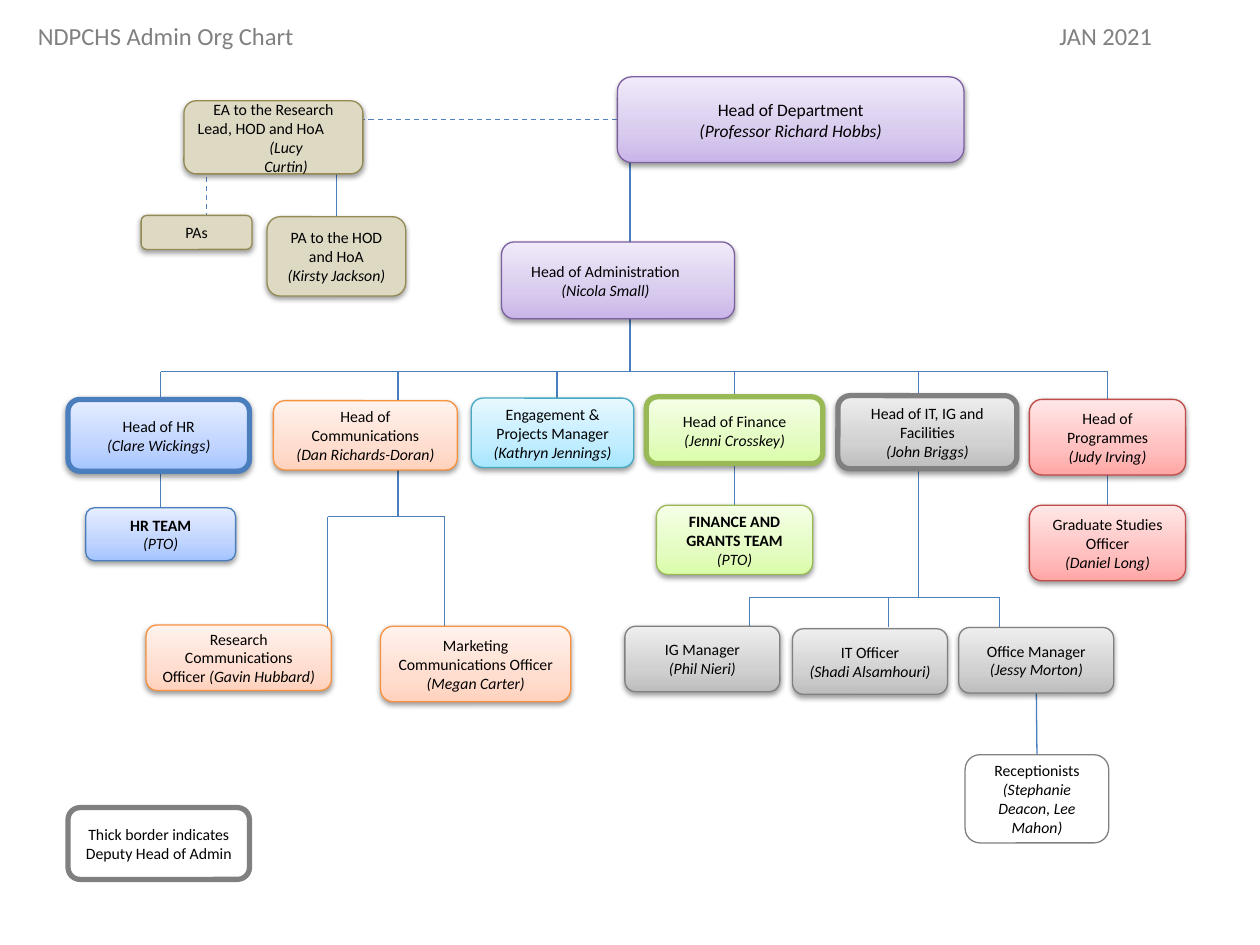
from copy import deepcopy

from pptx import Presentation
from pptx import util as u
from pptx.dml.color import RGBColor
from pptx.enum import dml, shapes, text
from pptx.oxml import parse_xml
from pptx.oxml.ns import nsdecls, qn

COLS, ROWS = 100, 75
CELL = u.Inches(0.1)
FONT = "Calibri"
TOP, BOTTOM, LEFT = 0, 2, 1

BLACK = RGBColor(0, 0, 0)
WHITE = RGBColor(255, 255, 255)
GREY = RGBColor(0x80, 0x80, 0x80)
LINK = RGBColor(0x4B, 0x7E, 0xBC)
DASH = RGBColor(0x4F, 0x81, 0xBD)


def look(edge, *fills):
    return RGBColor.from_string(edge), [RGBColor.from_string(f) for f in fills]


PURPLE = look("7D60A0", "C9B5E8", "D8CBEE", "F0EAF9")
BLUE = look("4B7EBC", "A4C4FF", "BFD4FF", "E6EEFF")
ORANGE = look("F69240", "FFD2BD", "FFDED0", "FFF2ED")
AQUA = look("46AAC5", "A7E6FF", "C1EDFF", "E7F8FF")
GREEN = look("98B955", "DAFDA7", "E4FCC2", "F5FFE7")
SILVER = look("808080", "BDBDBD", "D1D1D1", "EEEEEE")
RED = look("BF4C48", "FFA6A5", "FFC0BF", "FFE7E7")
TAN = look("948A54", "DDD9C3")
PLAIN = look("808080", "FFFFFF")
CLEAR = look("808080")


def span(n):
    return round(n * CELL)


def write(para, words, size, color, bold=False, italic=False):
    run = para.add_run()
    run.text = words
    font = run.font
    font.name, font.size, font.color.rgb = FONT, u.Pt(size), color
    font.bold, font.italic = bold, italic


def paint(fill, spPr, fills):
    """Fill with nothing, one colour, or a three-stop blend rising from the base."""
    if not fills:
        fill.background()
    elif len(fills) == 1:
        fill.solid()
        fill.fore_color.rgb = fills[0]
    else:
        fill.gradient()
        fill.gradient_angle = 90
        stops = spPr.find(qn("a:gradFill")).find(qn("a:gsLst"))
        stops.append(deepcopy(stops[-1]))
        for stop, place, color in zip(fill.gradient_stops, (0, 0.35, 1), fills):
            stop.position, stop.color.rgb = place, color


def cast(shape):
    """Give the shape a soft shadow straight below."""
    shape.element.spPr.find(qn("a:effectLst")).append(parse_xml(
        f'<a:outerShdw {nsdecls("a")} blurRad="40000" dist="20000" dir="5400000" '
        'rotWithShape="0"><a:srgbClr val="000000"><a:alpha val="38000"/>'
        '</a:srgbClr></a:outerShdw>'))


def box(slide, at, area, style, *lines, thick=False, bold=False, size=9,
        pad=(0.1, 0.05)):
    """Add a post; the bracketed part of each line is in italics."""
    x, y, w, h = area
    shape = slide.shapes.add_shape(
        shapes.MSO_SHAPE.ROUNDED_RECTANGLE,
        span(at[0] + x), span(at[1] + y), span(w), span(h))
    edge, fills = style
    paint(shape.fill, shape.element.spPr, fills)
    shape.line.color.rgb = edge
    shape.line.width = u.Pt(3 if thick else 0.75)
    shape.shadow.inherit = False
    if fills and fills != [WHITE]:
        cast(shape)
    frame = shape.text_frame
    frame.word_wrap = True
    frame.vertical_anchor = text.MSO_ANCHOR.MIDDLE
    frame.margin_left = frame.margin_right = u.Inches(pad[0])
    frame.margin_top = frame.margin_bottom = u.Inches(pad[1])
    for n, line in enumerate(lines):
        para = frame.add_paragraph() if n else frame.paragraphs[0]
        para.alignment = text.PP_ALIGN.CENTER
        post, mark, name = line.partition("(")
        if post:
            write(para, post, size, BLACK, bold=bold)
        if mark:
            write(para, mark + name, size, BLACK, italic=True)
    return shape


def nudge(shape, row, side, cols):
    """Indent one paragraph from marL or marR."""
    pPr = shape.text_frame.paragraphs[row]._p.get_or_add_pPr()
    pPr.set(side, str(span(cols)))


def link(slide, at, ends, start=None, stop=None, dash=False):
    """Add a line behind the posts; start and stop are (shape, site) joins."""
    x1, y1, x2, y2 = ends
    line = slide.shapes.add_connector(
        shapes.MSO_CONNECTOR.STRAIGHT, span(at[0] + x1), span(at[1] + y1),
        span(at[0] + x2), span(at[1] + y2))
    if start:
        line.begin_connect(*start)
    if stop:
        line.end_connect(*stop)
    line.line.color.rgb = DASH if dash else LINK
    line.line.width = u.Pt(0.75)
    if dash:
        line.line.dash_style = dml.MSO_LINE.DASH
    line.element.spPr.append(parse_xml(f'<a:effectLst {nsdecls("a")}/>'))
    slide.shapes.element.insert(2, line.element)


def header(slide, at):
    title = slide.shapes.title
    title.left, title.top = span(at[0]), span(at[1])
    title.width, title.height = span(61.9), span(5.7)
    date = slide.shapes.add_textbox(
        span(at[0] + 81.1), span(at[1] + 1.2), span(15.6), span(3.4))
    for shape, words in ((title, "NDPCHS Admin Org Chart"), (date, "JAN 2021")):
        frame = shape.text_frame
        frame.word_wrap = True
        frame.paragraphs[0].alignment = text.PP_ALIGN.LEFT
        write(frame.paragraphs[0], words, 14, GREY)
    title.text_frame.vertical_anchor = text.MSO_ANCHOR.MIDDLE


def chiefs(slide, at):
    """Place the two chiefs and return the upper one."""
    head = box(slide, at, (9.2, 0, 27.5, 6.8), PURPLE, "Head of Department",
               "(Professor Richard Hobbs)", size=10, pad=(0.07, 0.04))
    admin = box(slide, at, (0, 13.1, 18.5, 6.1), PURPLE, "Head of Administration",
                "(Nicola Small)", pad=(0.01, 0.01))
    nudge(admin, 0, "marR", 2)
    for y1, y2 in ((6.6, 13.1), (18.5, 23.4)):
        link(slide, at, (10.2, y1, 10.2, y2))
    return head


def support(slide, at, head):
    lead = box(slide, at, (3.4, 0, 14.2, 5.8), TAN, "EA to the Research",
               "Lead, HOD and HoA", "(Lucy Curtin)", pad=(0.07, 0.04))
    nudge(lead, 1, "marR", 2)
    nudge(lead, 2, "marL", 4)
    box(slide, at, (0, 9.1, 8.8, 2.7), TAN, "PAs")
    aide = box(slide, at, (10, 9.2, 11, 6.3), TAN, "PA to the HOD and HoA",
               "(Kirsty Jackson)")
    link(slide, at, (37.8, 1.5, 10.3, 1.5), start=(head, LEFT), dash=True)
    link(slide, at, (5.2, 3.2, 5.2, 9.1), dash=True)
    link(slide, at, (15.5, 3.2, 15.5, 9.2), stop=(aide, TOP))


def heads(slide, at):
    """Place the row of heads, hung from one bar, and the teams below them."""
    posts = (
        ((0, 2.2, 14.4, 5.7), BLUE, "Head of HR", "(Clare Wickings)", True),
        ((16.3, 2.3, 14.6, 5.5), ORANGE, "Head of Communications",
         "(Dan Richards-Doran)", False),
        ((32, 2.1, 12.9, 5.5), AQUA, "Engagement & Projects Manager",
         "(Kathryn Jennings)", False),
        ((45.9, 2, 14, 5.3), GREEN, "Head of Finance", "(Jenni Crosskey)", True),
        ((61.1, 1.9, 14.2, 5.8), SILVER, "Head of IT, IG and Facilities",
         "(John Briggs)", True),
        ((76.3, 2.2, 12.4, 6), RED, "Head of Programmes", "(Judy Irving)", False),
    )
    for area, style, post, name, thick in posts:
        box(slide, at, area, style, post, name, thick=thick)
    teams = (
        ((1.4, 10.8, 11.9, 4.2), BLUE, "HR TEAM", "(PTO)", True),
        ((46.7, 10.6, 12.4, 5.5), GREEN, "FINANCE AND GRANTS TEAM", "(PTO)", True),
        ((76.3, 10.6, 12.4, 6), RED, "Graduate Studies Officer",
         "(Daniel Long)", False),
    )
    for area, style, post, name, bold in teams:
        team = box(slide, at, area, style, post, name, bold=bold)
        mid = area[0] + area[2] / 2
        link(slide, at, (mid, 0, mid, area[1]), stop=(team, TOP))
    link(slide, at, (7.4, 0, 82.5, 0))
    for x, y in ((26.2, 11.5), (38.8, 2.2), (67.5, 17.9)):
        link(slide, at, (x, 0, x, y))


def fork(slide, at, drops, depth):
    """Draw a bar with a drop at each given column."""
    link(slide, at, (drops[0], 0, drops[-1], 0))
    for x in drops:
        link(slide, at, (x, 0, x, depth))


def comms(slide, at):
    fork(slide, at, (14.4, 23.7), 8.8)
    box(slide, at, (0, 8.6, 14.7, 5.2), ORANGE,
        "Research Communications Officer (Gavin Hubbard)")
    box(slide, at, (18.6, 8.7, 15.1, 6), ORANGE,
        "Marketing Communications Officer", "(Megan Carter)")


def tech(slide, at):
    fork(slide, at, (9.9, 20.9, 29.7), 2.4)
    posts = ((0, 2.3, "IG Manager", "(Phil Nieri)"),
             (13.3, 2.5, "IT Officer", "(Shadi Alsamhouri)"),
             (26.5, 2.4, "Office Manager", "(Jessy Morton)"))
    for x, y, post, name in posts:
        last = box(slide, at, (x, y, 12.3, 5.2), SILVER, post, name)
    desk = box(slide, at, (27, 12.5, 11.4, 7), PLAIN, "Receptionists",
               "(Stephanie Deacon, Lee Mahon)")
    link(slide, at, (32.7, 7.6, 32.7, 12.5), (last, BOTTOM), (desk, TOP))


def key(slide, at):
    box(slide, at, (0, 0, 14.4, 5.7), CLEAR,
        "Thick border indicates Deputy Head of Admin", thick=True)


def main():
    deck = Presentation()
    deck.slide_width, deck.slide_height = span(COLS), span(ROWS)
    slide = deck.slides.add_slide(deck.slide_layouts[5])
    header(slide, (2, 0))
    head = chiefs(slide, (39.8, 6.1))
    support(slide, (11.2, 8), head)
    heads(slide, (5.4, 29.5))
    comms(slide, (11.6, 41))
    tech(slide, (49.6, 47.4))
    key(slide, (5.4, 64.1))
    deck.save("out.pptx")


if __name__ == "__main__":
    main()
